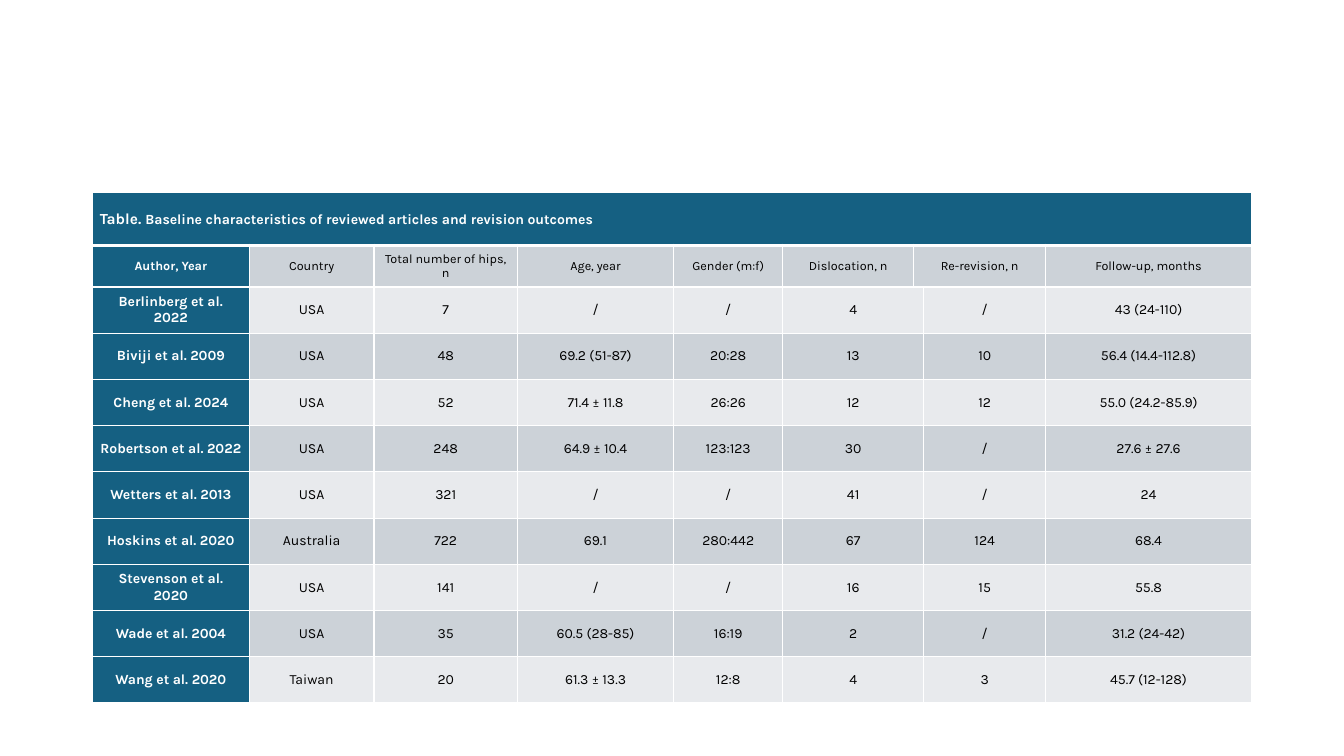
from lxml.etree import SubElement
from pptx import Presentation
from pptx.dml.color import RGBColor
from pptx.enum.text import MSO_ANCHOR, PP_ALIGN
from pptx.oxml.ns import qn
from pptx.util import Pt

COLORS = {"blue": "156082", "grey": "CCD2D8", "pale": "E8EAED", "white": "FFFFFF", "black": "000000"}
COLUMN_WIDTHS = [112, 89.2, 102.4, 111.7, 77.8, 93.6, 7.2, 87.1, 147]
ROW_HEIGHTS = [37.8, 29.6] + [33.05] * 9
CELL_FORMAT = {"margin_left": Pt(5.4), "margin_right": Pt(5.4), "margin_top": 0, "margin_bottom": 0,
               "vertical_anchor": MSO_ANCHOR.MIDDLE}
TITLE = [("Table. ", 11), ("Baseline characteristics of reviewed articles and revision outcomes", 10)]
STUDIES = [
    ["Author, Year", "Country", "Total number of hips, n", "Age, year", "Gender (m:f)",
     "Dislocation, n", "Re-revision, n", "Follow-up, months"],
    ["Berlinberg et al. 2022", "USA", "7", "/", "/", "4", "/", "43 (24-110)"],
    ["Biviji et al. 2009", "USA", "48", "69.2 (51-87)", "20:28", "13", "10", "56.4 (14.4-112.8)"],
    ["Cheng et al. 2024", "USA", "52", "71.4 ± 11.8", "26:26", "12", "12", "55.0 (24.2-85.9)"],
    ["Robertson et al. 2022", "USA", "248", "64.9 ± 10.4", "123:123", "30", "/", "27.6 ± 27.6"],
    ["Wetters et al. 2013", "USA", "321", "/", "/", "41", "/", "24"],
    ["Hoskins et al. 2020", "Australia", "722", "69.1", "280:442", "67", "124", "68.4"],
    ["Stevenson et al. 2020", "USA", "141", "/", "/", "16", "15", "55.8"],
    ["Wade et al. 2004", "USA", "35", "60.5 (28-85)", "16:19", "2", "/", "31.2 (24-42)"],
    ["Wang et al. 2020", "Taiwan", "20", "61.3 ± 13.3", "12:8", "4", "3", "45.7 (12-128)"],
]


def style_cell(cell, fill, row):
    for name, value in CELL_FORMAT.items():
        setattr(cell, name, value)
    properties = cell._tc.get_or_add_tcPr()
    for side in "LRTB":
        thick = (row, side) in [(0, "B"), (1, "T")]
        line = SubElement(properties, qn(f"a:ln{side}"), w=str(Pt(3 if thick else 1)))
        SubElement(SubElement(line, qn("a:solidFill")), qn("a:srgbClr"), val=COLORS["white"])
    cell.fill.solid()
    cell.fill.fore_color.rgb = RGBColor.from_string(COLORS[fill])


def write_cell(cell, spans, align, color, bold):
    para = cell.text_frame.paragraphs[0]
    para.alignment = align
    para.space_after = Pt(3)
    for text, size in spans:
        span = para.add_run()
        span.text = text
        for name, value in {"name": "Karla", "size": Pt(size), "bold": bold}.items():
            setattr(span.font, name, value)
        span.font.color.rgb = RGBColor.from_string(COLORS[color])


deck = Presentation()
deck.slide_width, deck.slide_height = Pt(960), Pt(540)
page = deck.slides.add_slide(deck.slide_layouts[6])
table = page.shapes.add_table(len(ROW_HEIGHTS), len(COLUMN_WIDTHS), Pt(66), Pt(137.6),
                              Pt(sum(COLUMN_WIDTHS)), Pt(sum(ROW_HEIGHTS))).table
for column, width in zip(table.columns, COLUMN_WIDTHS):
    column.width = Pt(width)
for table_row, height in zip(table.rows, ROW_HEIGHTS):
    table_row.height = Pt(height)

for row in range(len(ROW_HEIGHTS)):
    band = "grey" if row % 2 else "pale"
    for column in range(len(COLUMN_WIDTHS)):
        style_cell(table.cell(row, column), "blue" if row == 0 or column == 0 else band, row)

table.cell(0, 0).merge(table.cell(0, len(COLUMN_WIDTHS) - 1))
write_cell(table.cell(0, 0), TITLE, PP_ALIGN.LEFT, "white", True)

for row, study in enumerate(STUDIES, start=1):
    merge_start = 6 if row == 1 else 5
    table.cell(row, merge_start).merge(table.cell(row, merge_start + 1))
    for index, text in enumerate(study):
        column = index + (index > merge_start)
        write_cell(table.cell(row, column), [(text, 9 if row == 1 else 10)], PP_ALIGN.CENTER,
                   "black" if index else "white", index == 0)

deck.save("out.pptx")
